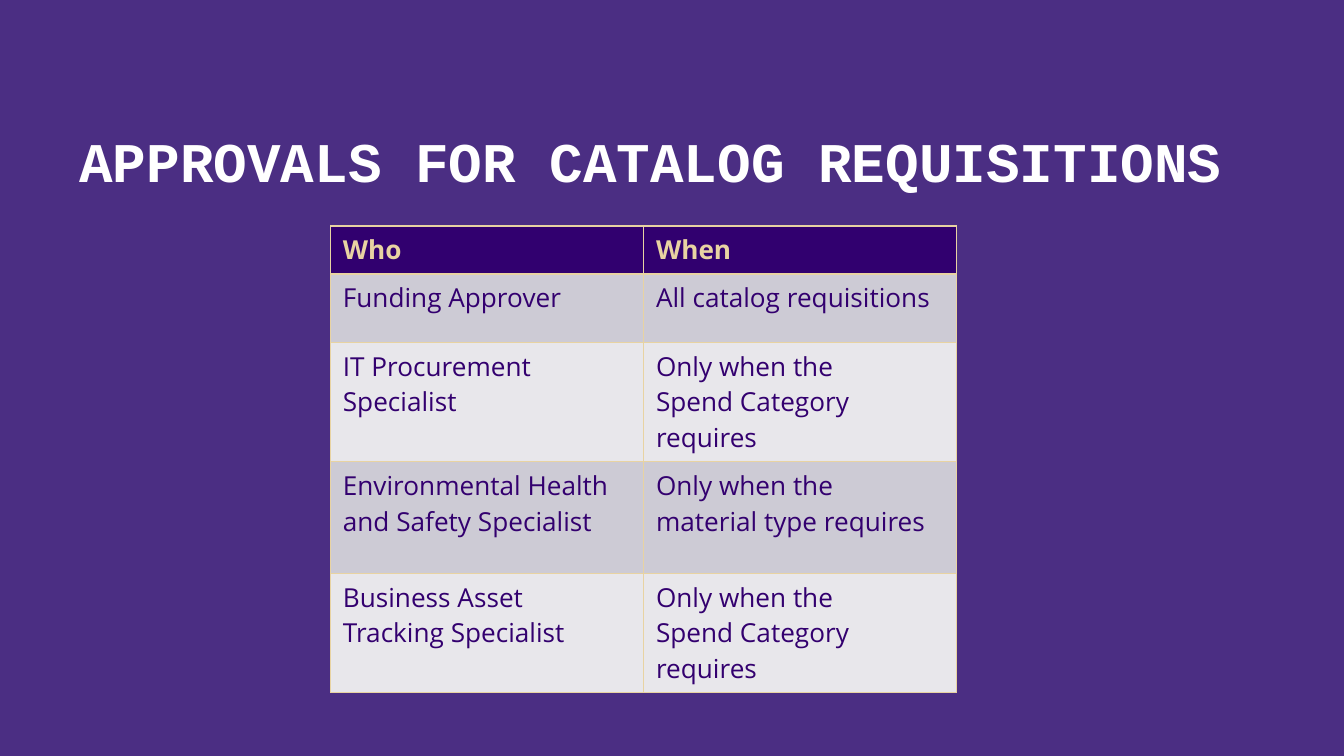
from lxml.etree import SubElement
from pptx import Presentation
from pptx.dml.color import RGBColor as RGB
from pptx.enum.text import MSO_ANCHOR as Anchor, PP_ALIGN as Align
from pptx.oxml.ns import qn
from pptx.util import Inches, Pt

PURPLE = RGB(0x4B, 0x2E, 0x83)
HEADER = RGB(0x31, 0x00, 0x6F)
INK = RGB(0x33, 0x00, 0x6F)
GOLD = RGB(0xE8, 0xD3, 0xA2)
WHITE = RGB(0xFF, 0xFF, 0xFF)
BANDS = [RGB(0xE8, 0xE7, 0xEB), RGB(0xCD, 0xCB, 0xD5)]

NBSP = chr(160)
SPEND_RULE = f"Only when the Spend{NBSP}Category requires"
APPROVALS = [
    ("Who", "When"),
    ("Funding Approver", "All catalog requisitions"),
    ("IT Procurement Specialist", SPEND_RULE),
    (f"Environmental Health and{NBSP}Safety Specialist",
     f"Only when the material{NBSP}type requires"),
    (f"Business Asset Tracking{NBSP}Specialist", SPEND_RULE),
]
ROW_HEIGHTS = [0.3, 0.51, 0.72, 0.83, 0.72]
COL_WIDTH = 2.33


def write(tf, text, font="Open Sans", size=14, color=INK, bold=False):
    p = tf.paragraphs[0]
    p.alignment = Align.LEFT
    r = p.add_run()
    r.text = text
    r.font.name = font
    r.font.size = Pt(size)
    r.font.color.rgb = color
    r.font.bold = bold


def set_borders(cell, **widths):
    tc_pr = cell._tc.get_or_add_tcPr()
    for i, side in enumerate("LRTB"):
        ln = SubElement(tc_pr, qn(f"a:ln{side}"), w=str(Pt(widths.get(side, 0.5))))
        fill = SubElement(ln, qn("a:solidFill"))
        SubElement(fill, qn("a:srgbClr"), val=str(GOLD))
        tc_pr.insert(i, ln)


def add_title(s, text):
    title = s.shapes.title
    title.left, title.top = Inches(0.49), Inches(0.4)
    title.width, title.height = Inches(8.96), Inches(1.09)
    tf = title.text_frame
    tf.vertical_anchor = Anchor.BOTTOM
    write(tf, text, font="Courier New", size=30, color=WHITE, bold=True)


def fill_cell(cell, text, row):
    header = row == 0
    cell.margin_left = cell.margin_right = Pt(6.6)
    cell.margin_top = cell.margin_bottom = Pt(3.3)
    cell.fill.solid()
    cell.fill.fore_color.rgb = HEADER if header else BANDS[row % 2]
    set_borders(cell, T=1.13 if row < 2 else 0.5, B=1.13 if header else 0.5)
    write(cell.text_frame, text, color=GOLD if header else INK, bold=header)


def add_approvals(s):
    cols = len(APPROVALS[0])
    table = s.shapes.add_table(
        len(APPROVALS), cols, Inches(2.46), Inches(1.68),
        Inches(cols * COL_WIDTH), Inches(sum(ROW_HEIGHTS))).table
    for col in table.columns:
        col.width = Inches(COL_WIDTH)
    for i, (texts, height) in enumerate(zip(APPROVALS, ROW_HEIGHTS)):
        table.rows[i].height = Inches(height)
        for j, text in enumerate(texts):
            fill_cell(table.cell(i, j), text, i)


def main():
    prs = Presentation()
    prs.slide_width = Inches(10)
    prs.slide_height = prs.slide_width * 9 // 16
    s = prs.slides.add_slide(prs.slide_layouts[5])
    s.background.fill.solid()
    s.background.fill.fore_color.rgb = PURPLE
    add_title(s, "APPROVALS FOR CATALOG REQUISITIONS")
    add_approvals(s)
    prs.save("out.pptx")


if __name__ == "__main__":
    main()
